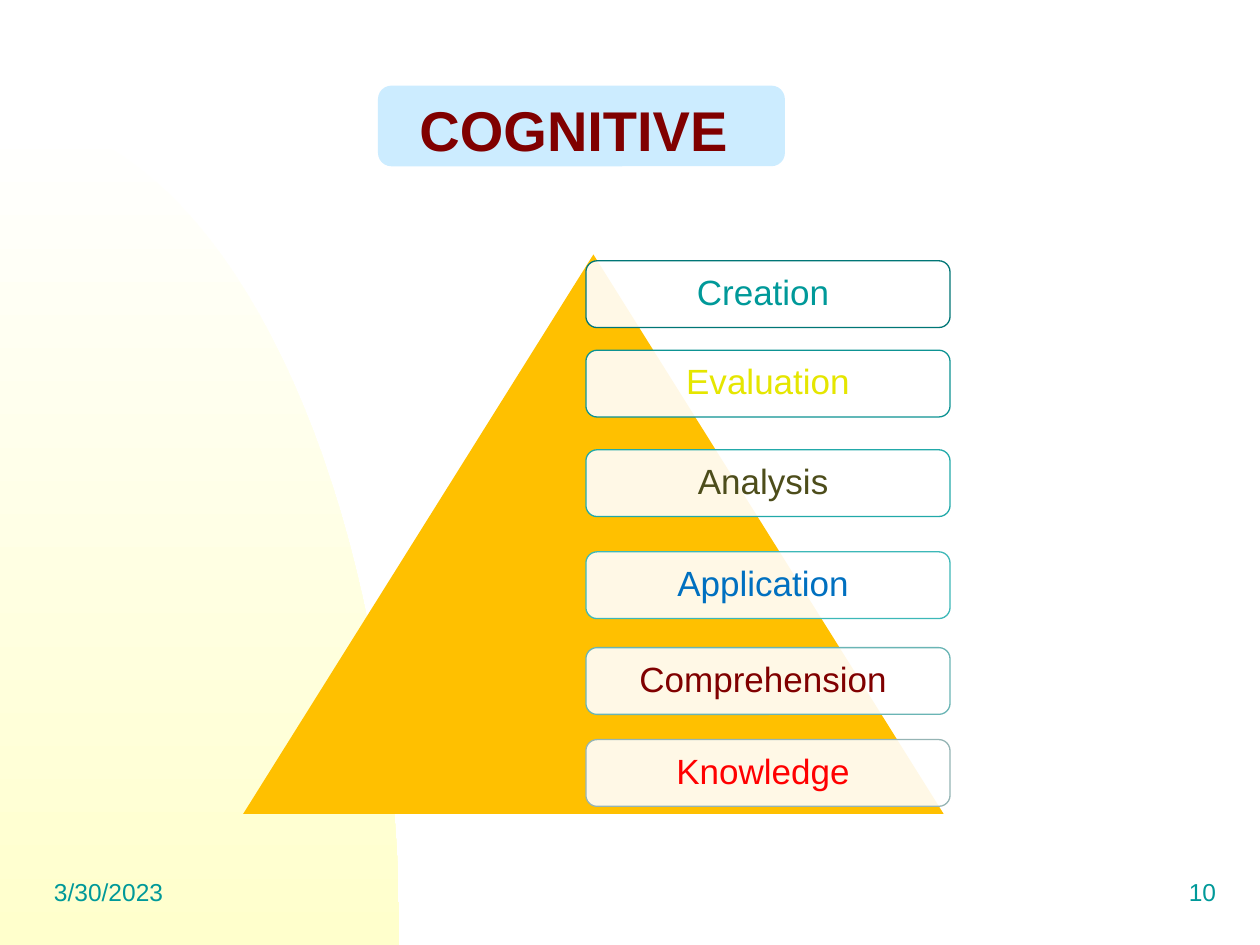
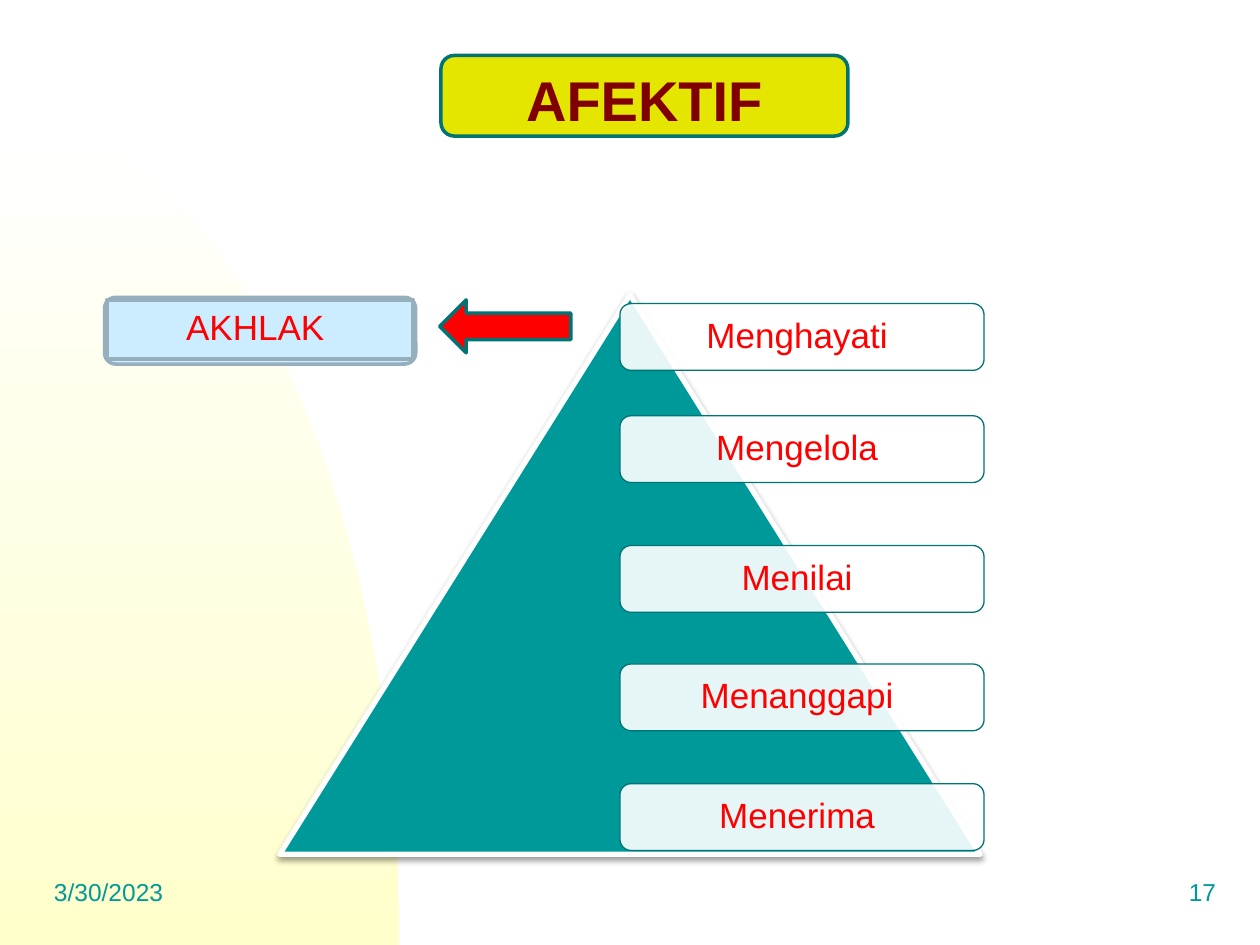
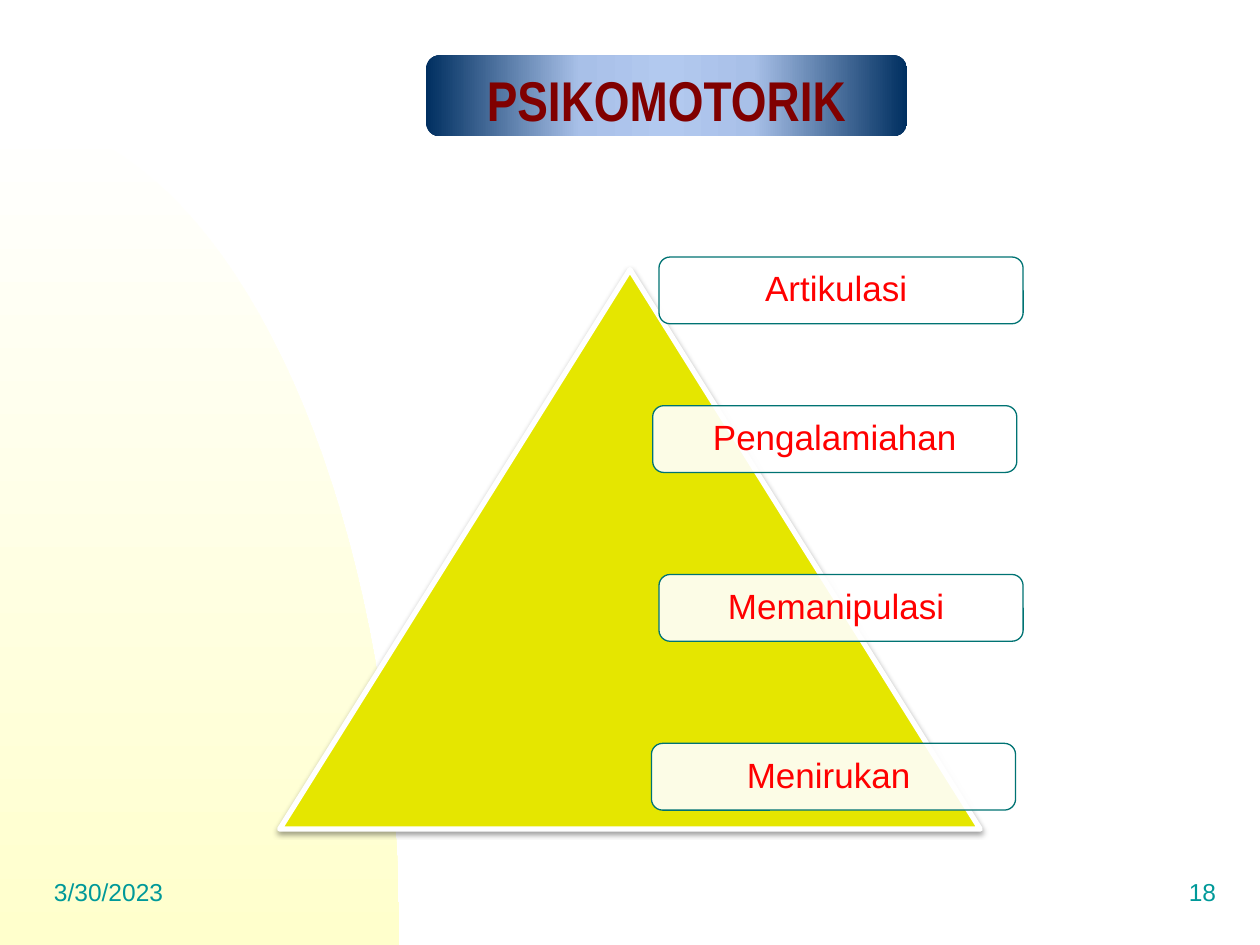
import math

import pptx
import pptx.dml.color
import pptx.enum.shapes
import pptx.enum.text
import pptx.oxml.ns
import pptx.util
from lxml import etree

Inches, Pt = pptx.util.Inches, pptx.util.Pt
RGBColor = pptx.dml.color.RGBColor
MSO_SHAPE = pptx.enum.shapes.MSO_SHAPE
MSO_ANCHOR = pptx.enum.text.MSO_ANCHOR
PP_ALIGN = pptx.enum.text.PP_ALIGN
qn = pptx.oxml.ns.qn

WHITE = RGBColor(0xFF, 0xFF, 0xFF)
BLACK = RGBColor(0x00, 0x00, 0x00)
CREAM = RGBColor(0xFF, 0xFF, 0xCC)
TEAL = RGBColor(0x00, 0x99, 0x99)
DARK_TEAL = RGBColor(0x00, 0x73, 0x73)
MAROON = RGBColor(0x80, 0x00, 0x00)
RED = RGBColor(0xFF, 0x00, 0x00)
YELLOW = RGBColor(0xE5, 0xE6, 0x00)
AMBER = RGBColor(0xFF, 0xC0, 0x00)
OLIVE = RGBColor(0x4D, 0x4D, 0x1B)
BLUE = RGBColor(0x00, 0x70, 0xC0)
SKY = RGBColor(0xCC, 0xEC, 0xFF)
STEEL = RGBColor(0x97, 0xAF, 0xBD)
NAVY = RGBColor(0x00, 0x2F, 0x60)
PALE_BLUE = RGBColor(0xB2, 0xC9, 0xEF)
SOFT_BLUE = RGBColor(0xA8, 0xC0, 0xE8)

DATE = "3/30/2023"
TRIANGLE_SIZE = (5.56, 4.44)
LEVEL_SIZE = (2.89, 0.53)
CURVE_WIDTH, CURVE_TOP, SLIDE_HEIGHT = 3.17, 0.92, 7.5
CURVE_STEPS = 40
TITLE_BLUES = [(0, NAVY), (32, SOFT_BLUE), (50, PALE_BLUE), (68, SOFT_BLUE), (100, NAVY)]

# Each level: text, left, top, text colour, outline colour
COGNITIVE = {
    "number": "10",
    "title": {"text": "COGNITIVE ", "box": (3, 0.68, 3.23, 0.64), "fill": SKY},
    "triangle": {"at": (1.93, 2.02), "fill": AMBER, "raised": False},
    "levels": [
        ("Creation ", 4.65, 2.07, TEAL, RGBColor(0x00, 0x76, 0x76)),
        ("Evaluation", 4.65, 2.78, YELLOW, RGBColor(0x0D, 0x93, 0x93)),
        ("Analysis ", 4.65, 3.57, OLIVE, RGBColor(0x22, 0xA9, 0xA9)),
        ("Application ", 4.65, 4.38, BLUE, RGBColor(0x3D, 0xB8, 0xB8)),
        ("Comprehension ", 4.65, 5.14, MAROON, RGBColor(0x6A, 0xB5, 0xB5)),
        ("Knowledge ", 4.65, 5.87, RED, RGBColor(0x95, 0xB4, 0xB4)),
    ],
}
AFFECTIVE = {
    "number": "17",
    "title": {"text": "AFEKTIF", "box": (3.5, 0.44, 3.23, 0.64), "fill": YELLOW,
              "outline": DARK_TEAL},
    "triangle": {"at": (2.22, 2.34), "fill": TEAL, "raised": True},
    "levels": [
        ("Menghayati ", 4.92, 2.41, RED, DARK_TEAL),
        ("Mengelola ", 4.92, 3.3, RED, DARK_TEAL),
        ("Menilai ", 4.92, 4.33, RED, DARK_TEAL),
        ("Menanggapi ", 4.92, 5.27, RED, DARK_TEAL),
        ("Menerima ", 4.92, 6.22, RED, DARK_TEAL),
    ],
    "outcome": "AKHLAK ",
}
PSYCHOMOTOR = {
    "number": "18",
    "title": {"text": "PSIKOMOTORIK", "box": (3.38, 0.44, 3.82, 0.64),
              "gradient": TITLE_BLUES, "font": "Arial Narrow"},
    "triangle": {"at": (2.22, 2.14), "fill": YELLOW, "raised": True},
    "levels": [
        ("Artikulasi ", 5.23, 2.04, RED, DARK_TEAL),
        ("Pengalamiahan", 5.18, 3.22, RED, DARK_TEAL),
        ("Memanipulasi ", 5.23, 4.56, RED, DARK_TEAL),
        ("Menirukan ", 5.17, 5.9, RED, DARK_TEAL),
    ],
}


def paint(shape, fill=None, outline=None, weight=0.75):
    shape.shadow.inherit = False
    if fill is not None:
        shape.fill.solid()
        shape.fill.fore_color.rgb = fill
    if outline is None:
        shape.line.fill.background()
    else:
        shape.line.color.rgb = outline
        shape.line.width = Pt(weight)


def add_colour(parent, colour, alpha=None):
    node = etree.SubElement(parent, qn("a:srgbClr"), val=str(colour))
    if alpha is not None:
        etree.SubElement(node, qn("a:alpha"), val=str(alpha * 1000))


def paint_gradient(shape, stops, angle):
    paint(shape)
    shape.fill.gradient()
    shape.fill.gradient_angle = angle
    stop_list = shape._element.spPr.find(qn("a:gradFill")).find(qn("a:gsLst"))
    for old_stop in list(stop_list):
        stop_list.remove(old_stop)
    for position, colour in stops:
        add_colour(etree.SubElement(stop_list, qn("a:gs"), pos=str(position * 1000)), colour)


def add_drop_shadow(shape):
    effects = shape._element.spPr.find(qn("a:effectLst"))
    shadow = etree.SubElement(effects, qn("a:outerShdw"), blurRad=str(Pt(3.1)),
                              dist=str(Pt(1.6)), dir="5400000", rotWithShape="0")
    add_colour(shadow, BLACK, 38)


def write(shape, text, size, colour, align=PP_ALIGN.CENTER, anchor=MSO_ANCHOR.MIDDLE,
          font="Arial", bold=False):
    frame = shape.text_frame
    frame.text = text
    frame.word_wrap = True
    frame.vertical_anchor = anchor
    paragraph = frame.paragraphs[0]
    paragraph.alignment = align
    run_font = paragraph.runs[0].font
    run_font.name, run_font.size, run_font.bold = font, Pt(size), bold
    run_font.color.rgb = colour
    return paragraph


def add_preset(slide, kind, box):
    return slide.shapes.add_shape(kind, *map(Inches, box))


def add_curve(slide):
    """Quarter ellipse that rises from the lower left corner."""
    angles = [math.pi / 2 * step / CURVE_STEPS for step in range(1, CURVE_STEPS + 1)]
    height = SLIDE_HEIGHT - CURVE_TOP
    edge = [(Inches(CURVE_WIDTH * math.sin(a)), Inches(SLIDE_HEIGHT - height * math.cos(a)))
            for a in angles]
    outline = slide.shapes.build_freeform(0, Inches(CURVE_TOP))
    outline.add_line_segments(edge + [(0, Inches(SLIDE_HEIGHT))], close=True)
    paint_gradient(outline.convert_to_shape(), [(0, WHITE), (100, CREAM)], 270)


def add_footer(slide, number):
    for text, left, align in [(DATE, 0.33, PP_ALIGN.LEFT), (number, 7.67, PP_ALIGN.RIGHT)]:
        footer = slide.shapes.add_textbox(*map(Inches, (left, 6.83, 2.08, 0.5)))
        write(footer, text, 14, TEAL, align)


def add_title(slide, title):
    plate = add_preset(slide, MSO_SHAPE.ROUNDED_RECTANGLE, title["box"])
    if "gradient" in title:
        paint_gradient(plate, title["gradient"], 0)
    else:
        paint(plate, title["fill"], title.get("outline"), 2)
    heading = write(plate, title["text"], 32, MAROON, anchor=MSO_ANCHOR.TOP,
                    font=title.get("font", "Arial"), bold=True)
    heading.space_before = Pt(6)


def add_triangle(slide, triangle):
    pyramid = add_preset(slide, MSO_SHAPE.ISOSCELES_TRIANGLE, triangle["at"] + TRIANGLE_SIZE)
    if triangle["raised"]:
        paint(pyramid, triangle["fill"], WHITE, 3)
        add_drop_shadow(pyramid)
    else:
        paint(pyramid, triangle["fill"])


def add_level(slide, text, left, top, colour, outline):
    level = add_preset(slide, MSO_SHAPE.ROUNDED_RECTANGLE, (left, top) + LEVEL_SIZE)
    paint(level, WHITE, outline)
    white = level._element.spPr.find(qn("a:solidFill")).find(qn("a:srgbClr"))
    etree.SubElement(white, qn("a:alpha"), val="90000")
    write(level, text, 20, colour).line_spacing = 0.9


def add_outcome(slide, text):
    """Arrow from the top level to the result it leads to."""
    arrow = add_preset(slide, MSO_SHAPE.DOWN_ARROW, (3.8, 2.07, 0.42, 1.04))
    arrow.rotation = 90
    paint(arrow, RED, DARK_TEAL, 2)
    frame = add_preset(slide, MSO_SHAPE.ROUNDED_RECTANGLE, (0.83, 2.36, 2.47, 0.53))
    panel = add_preset(slide, MSO_SHAPE.RECTANGLE, (0.85, 2.38, 2.43, 0.47))
    for part in (frame, panel):
        paint(part, SKY, STEEL, 2)
    write(panel, text, 20, RED).line_spacing = 0.9


def main():
    deck = pptx.Presentation()
    deck.slide_width, deck.slide_height = Inches(10), Inches(SLIDE_HEIGHT)
    for domain in (COGNITIVE, AFFECTIVE, PSYCHOMOTOR):
        slide = deck.slides.add_slide(deck.slide_layouts[6])
        add_curve(slide)
        add_footer(slide, domain["number"])
        add_title(slide, domain["title"])
        add_triangle(slide, domain["triangle"])
        for level in domain["levels"]:
            add_level(slide, *level)
        if "outcome" in domain:
            add_outcome(slide, domain["outcome"])
    deck.save("out.pptx")


if __name__ == "__main__":
    main()
